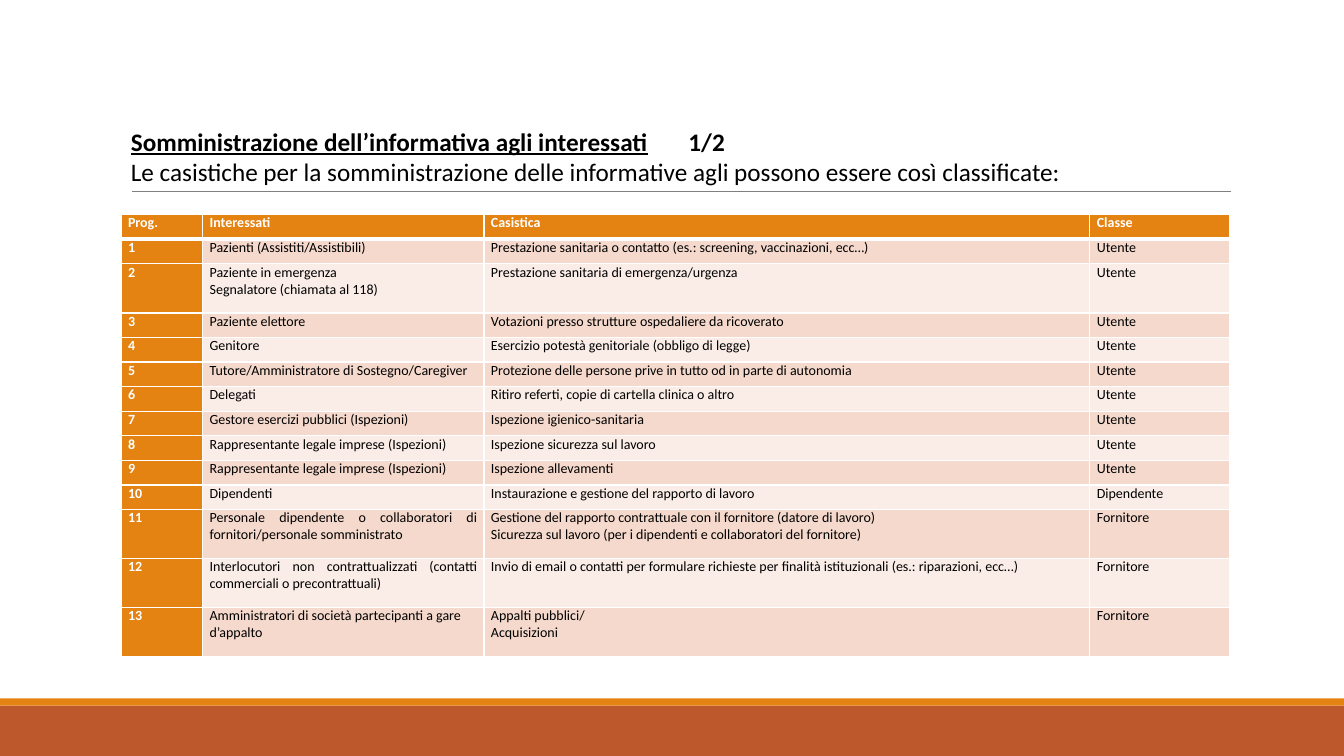
from dataclasses import dataclass

from lxml.etree import SubElement
from pptx import Presentation
from pptx.dml.color import RGBColor as Color
from pptx.enum.shapes import MSO_CONNECTOR as Connector, MSO_SHAPE as Shape
from pptx.enum.text import MSO_ANCHOR as Anchor, PP_ALIGN as Align
from pptx.oxml.ns import qn
from pptx.util import Inches, Pt


@dataclass(frozen=True)
class Theme:
    font: str = "Calibri"
    title_size: int = 18
    table_size: int = 10
    ink: str = "000000"
    white: str = "FFFFFF"
    rule: str = "808080"
    orange: str = "E48312"
    rust: str = "BD582C"
    bands: tuple = ("F5D9CC", "FAEDE7")


THEME = Theme()
COLUMN_WIDTHS = (0.81, 2.79, 6.01, 1.39)
HEADINGS = ("Prog.", "Interessati", "Casistica", "Classe")
CASES = (
    ("Pazienti (Assistiti/Assistibili)",
     "Prestazione sanitaria o contatto (es.: screening, vaccinazioni, ecc…)", "Utente"),
    ("Paziente in emergenza\nSegnalatore (chiamata al 118)",
     "Prestazione sanitaria di emergenza/urgenza", "Utente"),
    ("Paziente elettore", "Votazioni presso strutture ospedaliere da ricoverato", "Utente"),
    ("Genitore", "Esercizio potestà genitoriale (obbligo di legge)", "Utente"),
    ("Tutore/Amministratore di Sostegno/Caregiver",
     "Protezione delle persone prive in tutto od in parte di autonomia", "Utente"),
    ("Delegati", "Ritiro referti, copie di cartella clinica o altro", "Utente"),
    ("Gestore esercizi pubblici (Ispezioni)", "Ispezione igienico-sanitaria", "Utente"),
    ("Rappresentante legale imprese (Ispezioni)", "Ispezione sicurezza sul lavoro", "Utente"),
    ("Rappresentante legale imprese (Ispezioni)", "Ispezione allevamenti", "Utente"),
    ("Dipendenti", "Instaurazione e gestione del rapporto di lavoro", "Dipendente"),
    ("Personale dipendente o collaboratori di fornitori/personale somministrato",
     "Gestione del rapporto contrattuale con il fornitore (datore di lavoro)\n"
     "Sicurezza sul lavoro (per i dipendenti e collaboratori del fornitore)", "Fornitore"),
    ("Interlocutori non contrattualizzati (contatti commerciali o precontrattuali)",
     "Invio di email o contatti per formulare richieste per finalità istituzionali "
     "(es.: riparazioni, ecc…)", "Fornitore"),
    ("Amministratori di società partecipanti a gare d’appalto",
     "Appalti pubblici/\nAcquisizioni", "Fornitore"),
)
TALL_ROWS = (2, 11, 12, 13)


def add_span(para, text, size, color, bold=False, underline=False):
    span = para.add_run()
    span.text = text
    span.font.name = THEME.font
    span.font.size = Pt(size)
    span.font.color.rgb = Color.from_string(color)
    span.font.bold = bold
    span.font.underline = underline


def add_footer(page, left, top, width, height):
    stripe = 0.07
    bands = ((top + stripe, height - stripe, THEME.rust), (top, stripe, THEME.orange))
    for band_top, band_height, color in bands:
        band = page.shapes.add_shape(
            Shape.RECTANGLE, Inches(left), Inches(band_top), Inches(width), Inches(band_height))
        band.shadow.inherit = False
        band.fill.solid()
        band.fill.fore_color.rgb = Color.from_string(color)
        band.line.fill.background()


def add_title(page, left, top, width, height):
    bottom = Inches(top + height)
    rule = page.shapes.add_connector(
        Connector.STRAIGHT, Inches(left + 0.11), bottom, Inches(left + width + 0.01), bottom)
    rule.line.color.rgb = Color.from_string(THEME.rule)
    rule.line.width = Pt(0.5)
    SubElement(rule._element.spPr, qn("a:effectLst"))

    box = page.shapes.add_textbox(Inches(left), Inches(top), Inches(width), Inches(height))
    frame = box.text_frame
    frame.word_wrap = True
    frame.vertical_anchor = Anchor.BOTTOM
    para = frame.paragraphs[0]
    stops = SubElement(para._p.get_or_add_pPr(), qn("a:tabLst"))
    SubElement(stops, qn("a:tab"), pos=str(Inches(5.53)), algn="l")
    add_span(para, "Somministrazione dell’informativa agli interessati",
             THEME.title_size, THEME.ink, bold=True, underline=True)
    add_span(para, "\t1/2", THEME.title_size, THEME.ink, bold=True)
    para.add_line_break()
    add_span(para, "Le casistiche per la somministrazione delle informative agli "
             "possono essere così classificate:", THEME.title_size, THEME.ink)


def set_borders(cell, top, bottom):
    properties = cell._tc.get_or_add_tcPr()
    for side, points in (("L", 1), ("R", 1), ("T", top), ("B", bottom)):
        border = SubElement(properties, qn(f"a:ln{side}"), w=str(Pt(points)))
        fill = SubElement(border, qn("a:solidFill"))
        SubElement(fill, qn("a:srgbClr"), val=THEME.white)


def fill_cell(cell, text, row, column):
    accent = row == 0 or column == 0
    set_borders(cell, 3 if row == 1 else 1, 3 if row == 0 else 1)
    cell.fill.solid()
    cell.fill.fore_color.rgb = Color.from_string(
        THEME.orange if accent else THEME.bands[(row - 1) % 2])
    cell.margin_left = cell.margin_right = Inches(0.07)
    cell.margin_top = cell.margin_bottom = 0
    justified = 0 < row < len(CASES) and column in (1, 2)
    for index, line in enumerate(text.split("\n")):
        frame = cell.text_frame
        para = frame.add_paragraph() if index else frame.paragraphs[0]
        para.alignment = Align.JUSTIFY if justified else Align.LEFT
        add_span(para, line, THEME.table_size, THEME.white if accent else THEME.ink, bold=accent)


def add_case_table(page, left, top, width, height):
    rows = [HEADINGS] + [(str(number), *case) for number, case in enumerate(CASES, 1)]
    table = page.shapes.add_table(
        len(rows), len(HEADINGS), Inches(left), Inches(top), Inches(width), Inches(height)).table
    for column, column_width in zip(table.columns, COLUMN_WIDTHS):
        column.width = Inches(column_width)
    unit = height / (len(rows) + len(TALL_ROWS))
    for row, texts in enumerate(rows):
        table.rows[row].height = Inches(unit * (2 if row in TALL_ROWS else 1))
        for column, text in enumerate(texts):
            fill_cell(table.cell(row, column), text, row, column)


def main():
    deck = Presentation()
    deck.slide_width, deck.slide_height = Inches(13.33), Inches(7.5)
    page = deck.slides.add_slide(deck.slide_layouts[6])
    add_footer(page, 0, 6.93, 13.33, 0.57)
    add_title(page, 1.2, 0.31, 11, 1.59)
    add_case_table(page, 1.2, 2.13, 11, 4.39)
    deck.save("out.pptx")


if __name__ == "__main__":
    main()
